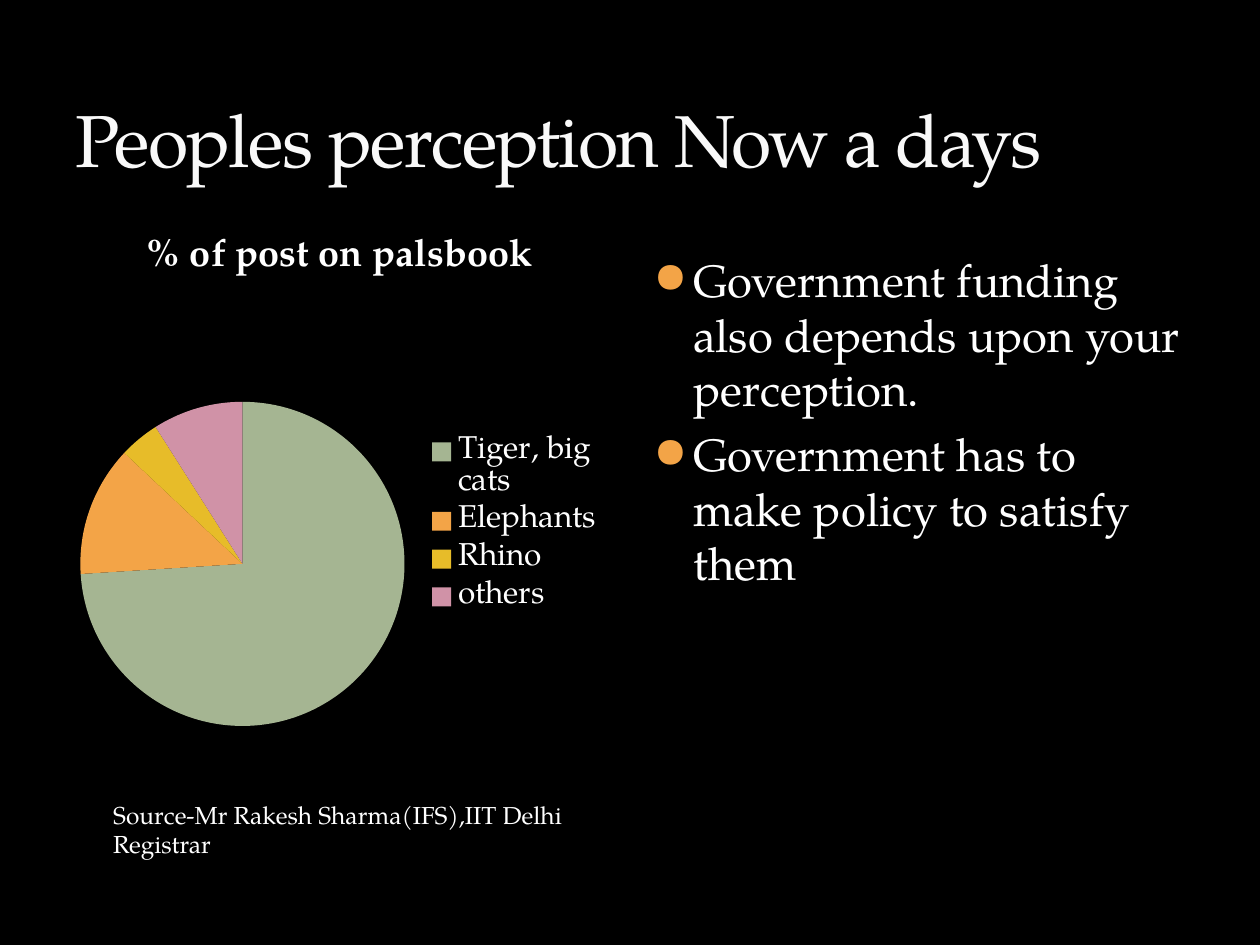
from lxml import etree
from pptx import Presentation, util as u
from pptx.chart.data import CategoryChartData
from pptx.dml.color import RGBColor
from pptx.enum import chart as ch, text
from pptx.oxml.ns import qn

# Content
TITLE = "Peoples perception Now a days"
POINTS = [
    "Government funding also depends upon your perception.",
    "Government has to make policy to satisfy them",
]
SOURCE = "Source-Mr Rakesh Sharma(IFS),IIT Delhi Registrar"
HEAD = "% of post on palsbook"
SHARES = [  # category, value, colour
    ("Tiger, big cats", 74, "A5B592"),
    ("Elephants", 13, "F3A447"),
    ("Rhino", 4, "E7BC29"),
    ("others", 9, "D092A7"),
]
FONT, WHITE, ACCENT = "TeX Gyre Pagella", "FFFFFF", "F3A447"

# Layout as shares of the slide: left, top, width, height
WIDE, HIGH = 10, 7.5
AREAS = {
    "title": (0.05, 0.02, 0.9, 0.18),
    "chart": (0.05, 0.22, 0.44, 0.67),
    "body": (0.51, 0.26, 0.44, 0.62),
    "source": (0.08, 0.84, 0.43, 0.05),
}


def area(name):
    return [u.Inches(part * size)
            for part, size in zip(AREAS[name], (WIDE, HIGH) * 2)]


def place(shape, name):
    shape.left, shape.top, shape.width, shape.height = area(name)


def style(font, size, color=WHITE):
    font.name, font.size = FONT, u.Pt(size)
    font.color.rgb = RGBColor.from_string(color)


def bullet(para):
    props = para._p.get_or_add_pPr()
    props.set("marL", str(u.Inches(0.3)))
    props.set("indent", str(u.Inches(-0.3)))
    tint = etree.SubElement(props, qn("a:buClr"))
    etree.SubElement(tint, qn("a:srgbClr"), val=ACCENT)
    etree.SubElement(props, qn("a:buSzPct"), val="85000")
    etree.SubElement(props, qn("a:buFont"), typeface=FONT)
    etree.SubElement(props, qn("a:buChar"), char="●")


deck = Presentation()
deck.slide_width, deck.slide_height = u.Inches(WIDE), u.Inches(HIGH)
slide = deck.slides.add_slide(deck.slide_layouts[1])
fill = slide.background.fill
fill.solid()
fill.fore_color.rgb = RGBColor.from_string("000000")

# Title
title, body = slide.placeholders
place(title, "title")
frame = title.text_frame
frame.text = TITLE
frame.auto_size = text.MSO_AUTO_SIZE.NONE
frame.vertical_anchor = text.MSO_ANCHOR.BOTTOM
para = frame.paragraphs[0]
para.alignment = text.PP_ALIGN.LEFT
style(para.runs[0].font, 42, "F9F9F9")
para.runs[0].font._element.set("spc", "-100")

# Pie chart
data = CategoryChartData()
data.categories = [name for name, _, _ in SHARES]
data.add_series(HEAD, [value for _, value, _ in SHARES])
pie = slide.shapes.add_chart(
    ch.XL_CHART_TYPE.PIE, *area("chart"), data).chart
style(pie.font, 18)
pie.has_title = True
pie.chart_title.include_in_layout = False
pie.chart_title.text_frame.text = HEAD
font = pie.chart_title.text_frame.paragraphs[0].runs[0].font
style(font, 21.6)
font.bold = True
pie.has_legend = True
pie.legend.position = ch.XL_LEGEND_POSITION.RIGHT
pie.legend.include_in_layout = False
style(pie.legend.font, 18)
plot = pie.plots[0]
plot.vary_by_categories = True
for i, (_, _, color) in enumerate(SHARES):
    fill = plot.series[0].points[i].format.fill
    fill.solid()
    fill.fore_color.rgb = RGBColor.from_string(color)

# Bulleted list
place(body, "body")
frame = body.text_frame
frame.text = "\n".join(POINTS)
frame.auto_size = text.MSO_AUTO_SIZE.NONE
for para in frame.paragraphs:
    para.space_before = u.Pt(6)
    bullet(para)
    style(para.runs[0].font, 26)

# Source note
note = slide.shapes.add_textbox(*area("source")).text_frame
note.word_wrap = True
note.auto_size = text.MSO_AUTO_SIZE.SHAPE_TO_FIT_TEXT
note.text = SOURCE
style(note.paragraphs[0].runs[0].font, 14)

deck.save("out.pptx")
